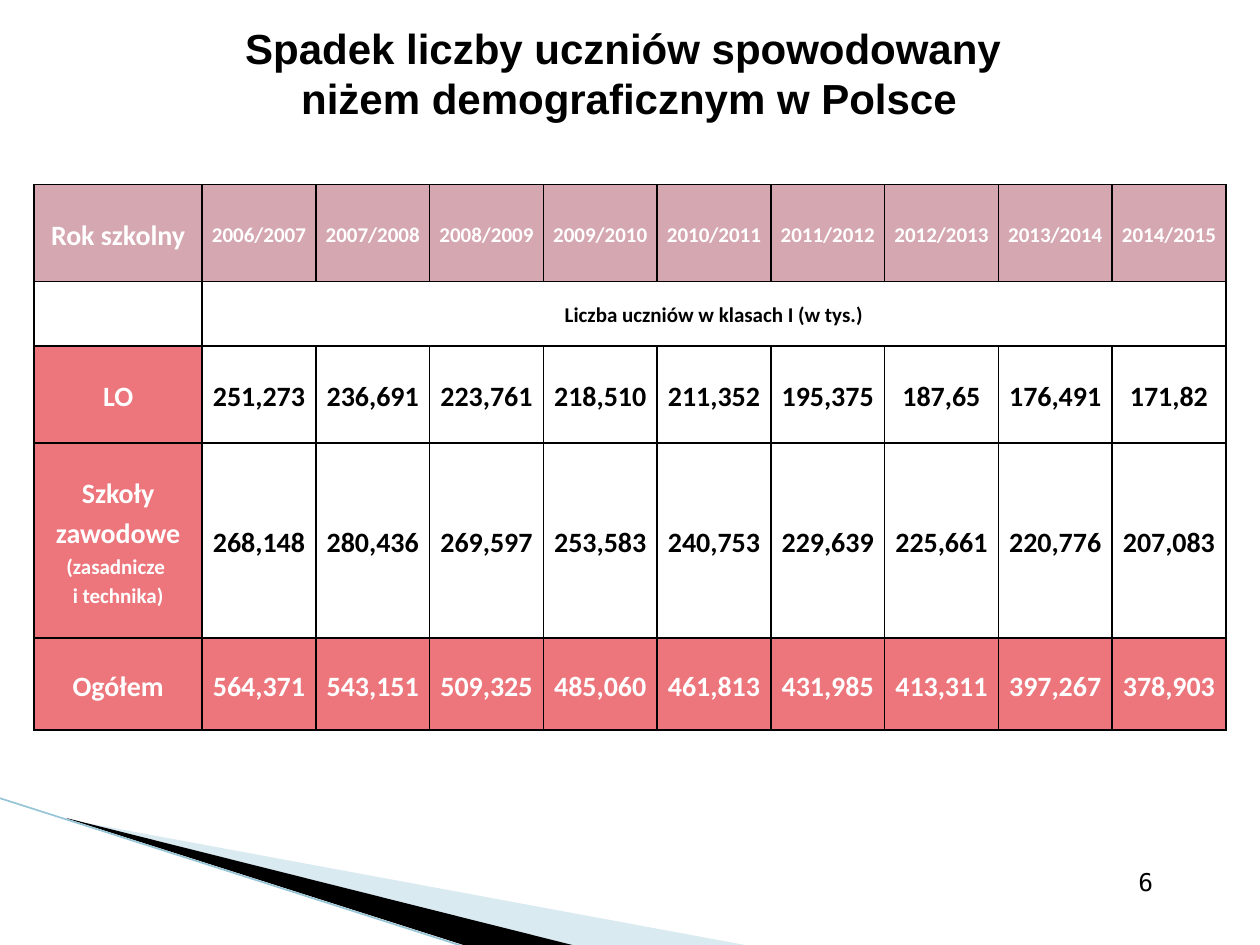
from dataclasses import dataclass

import pptx
import pptx.dml.color
import pptx.enum.shapes
import pptx.enum.text
import pptx.oxml
import pptx.oxml.ns
import pptx.util
from lxml import etree

Pt = pptx.util.Pt
ALIGN = pptx.enum.text.PP_ALIGN
MIDDLE = pptx.enum.text.MSO_ANCHOR.MIDDLE
qn = pptx.oxml.ns.qn

HUES = {
    "black": "000000", "white": "FFFFFF", "head": "D5A7B1",
    "coral": "EC767C", "pale": "A0CBDC", "edge": "97C5D8",
}

YEARS = [f"{year}/{year + 1}" for year in range(2006, 2015)]
LICEA = "251,273 236,691 223,761 218,510 211,352 195,375 187,65 176,491 171,82".split()
TRADE = "268,148 280,436 269,597 253,583 240,753 229,639 225,661 220,776 207,083".split()
TOTAL = "564,371 543,151 509,325 485,060 461,813 431,985 413,311 397,267 378,903".split()


@dataclass
class Wedge:
    points: list[tuple[float, float]]
    hue: str
    alpha: int = 100


@dataclass
class Row:
    height: float
    label: list[tuple[str, float]]
    values: list[str]
    size: float = 16
    label_fill: str | None = "coral"
    fill: str | None = None
    hue: str = "black"


WEDGES = [
    Wedge([(39.6, 468.5), (428.4, 540.5), (328.5, 540.5), (39.6, 468)], "pale", 40),
    Wedge([(38, 467.5), (329, 540.5), (268, 541), (39, 468)], "black"),
]

ROWS = [
    Row(55.5, [("Rok szkolny", 16)], YEARS, 12, "head", "head", "white"),
    Row(36.75, [], ["Liczba uczniów w klasach I (w tys.)"], 12, None),
    Row(55.5, [("LO", 16)], LICEA),
    Row(111.5, [("Szkoły zawodowe ", 16), ("(zasadnicze \ni technika)", 12)], TRADE),
    Row(52.5, [("Ogółem", 16)], TOTAL, fill="coral", hue="white"),
]


def color(name: str) -> pptx.dml.color.RGBColor:
    return pptx.dml.color.RGBColor.from_string(HUES[name])


def paint(fill, name: str | None) -> None:
    if name is None:
        fill.background()
    else:
        fill.solid()
        fill.fore_color.rgb = color(name)


def style(font, name: str, hue: str, bold: bool = False) -> None:
    font.name, font.bold = name, bold
    font.color.rgb = color(hue)


def draw_wedge(shapes, wedge: Wedge) -> None:
    start, *rest = [(Pt(x), Pt(y)) for x, y in wedge.points]
    pen = shapes.build_freeform(*start)
    pen.add_line_segments(rest, close=True)
    shape = pen.convert_to_shape()
    shape.shadow.inherit = False
    paint(shape.fill, wedge.hue)
    shape.line.fill.background()
    if wedge.alpha < 100:
        tint = next(shape._element.spPr.iter(qn("a:srgbClr")))
        etree.SubElement(tint, qn("a:alpha"), val=str(wedge.alpha * 1000))


def draw_edge(shapes) -> None:
    line = shapes.add_connector(
        pptx.enum.shapes.MSO_CONNECTOR.STRAIGHT, Pt(-0.5), Pt(456), Pt(267), Pt(541.5))
    line.line.width = Pt(0.95)
    line.line.color.rgb = color("edge")
    etree.SubElement(line._element.spPr, qn("a:effectLst"))


def draw_title(title) -> None:
    title.left, title.top, title.width, title.height = Pt(-0.5), Pt(-0.5), Pt(720), Pt(84)
    paint(title.fill, "white")
    frame = title.text_frame
    frame.text = "Spadek liczby uczniów spowodowany \nniżem demograficznym w Polsce"
    frame.vertical_anchor = MIDDLE
    for para in frame.paragraphs:
        para.alignment = ALIGN.CENTER
        para.font.size = Pt(24)
        style(para.font, "Arial", "black", True)


def draw_number(shapes) -> None:
    frame = shapes.add_textbox(Pt(516), Pt(492), Pt(150), Pt(36)).text_frame
    frame.word_wrap = True
    para = frame.paragraphs[0]
    para.text = "6"
    para.alignment = ALIGN.RIGHT
    para.font.size = Pt(14)
    style(para.font, "DejaVu Sans Mono", "black")


def frame_cell(cell) -> None:
    """Give the cell a thin black border on all four sides."""
    props = cell._tc.get_or_add_tcPr()
    for side in "LRTB":
        line = etree.SubElement(props, qn(f"a:ln{side}"), w=str(Pt(1)))
        solid = etree.SubElement(line, qn("a:solidFill"))
        etree.SubElement(solid, qn("a:srgbClr"), val=HUES["black"])


def fill_cell(cell, runs: list[tuple[str, float]], hue: str, fill: str | None) -> None:
    paint(cell.fill, fill)
    cell.vertical_anchor = MIDDLE
    cell.margin_left = cell.margin_right = Pt(5)
    cell.margin_top = cell.margin_bottom = 0
    para = cell.text_frame.paragraphs[0]
    para.alignment, para.line_spacing = ALIGN.CENTER, 1.15
    style(para.font, "Calibri", hue, True)
    for text, size in runs:
        for i, part in enumerate(text.split("\n")):
            if i:
                para.add_line_break()
            run = para.add_run()
            run.text = part
            run.font.size = Pt(size)
            style(run.font, "Calibri", hue, True)


def draw_table(shapes) -> None:
    widths = [96] + [65] * len(YEARS)
    total = sum(row.height for row in ROWS)
    table = shapes.add_table(
        len(ROWS), len(widths), Pt(19.5), Pt(105.5), Pt(sum(widths)), Pt(total)).table
    table.first_row = table.horz_banding = False
    for column, width in zip(table.columns, widths):
        column.width = Pt(width)
    for cell in table.iter_cells():
        frame_cell(cell)
    for i, row in enumerate(ROWS):
        table.rows[i].height = Pt(row.height)
        fill_cell(table.cell(i, 0), row.label, "white", row.label_fill)
        for j, value in enumerate(row.values, 1):
            fill_cell(table.cell(i, j), [(value, row.size)], row.hue, row.fill)
        if len(row.values) == 1:
            for j in range(2, len(widths)):
                paint(table.cell(i, j).fill, None)
            table.cell(i, 1).merge(table.cell(i, len(YEARS)))


def main() -> None:
    deck = pptx.Presentation()
    deck.slide_width, deck.slide_height = Pt(720), Pt(540)
    slide = deck.slides.add_slide(deck.slide_layouts[5])
    for wedge in WEDGES:
        draw_wedge(slide.shapes, wedge)
    draw_edge(slide.shapes)
    draw_number(slide.shapes)
    draw_title(slide.shapes.title)
    draw_table(slide.shapes)
    deck.save("out.pptx")


if __name__ == "__main__":
    main()
